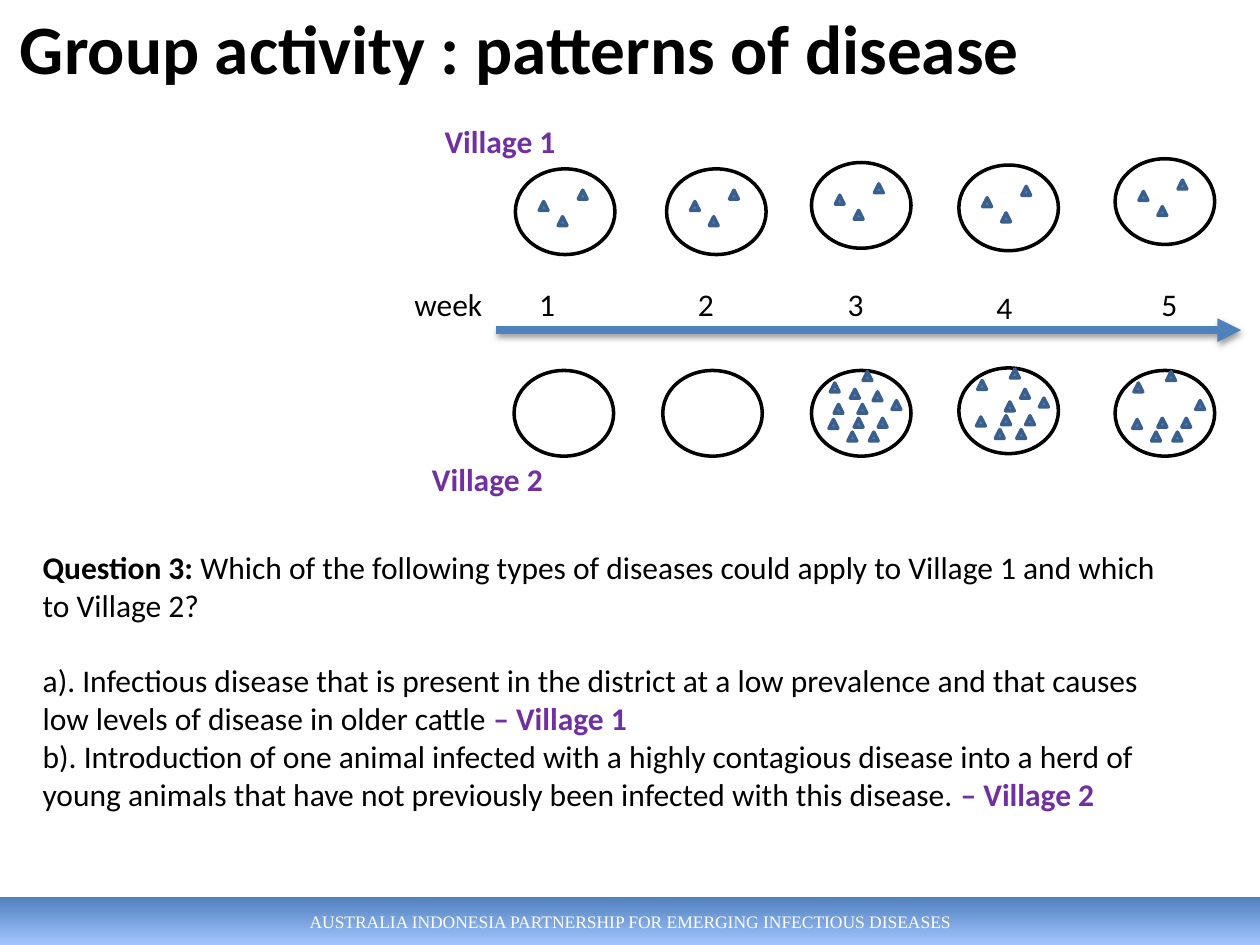
from lxml import etree
from pptx import Presentation, util as u
from pptx.dml.color import RGBColor
from pptx.enum import shapes, text
from pptx.oxml import ns

BLACK = RGBColor(0, 0, 0)
WHITE = RGBColor(0xFF, 0xFF, 0xFF)
BLUE = RGBColor(0x4F, 0x81, 0xBD)
NAVY = RGBColor(0x3A, 0x5F, 0x8C)
PALE = RGBColor(0xA4, 0xC4, 0xFF)
PURPLE = RGBColor(0x70, 0x30, 0xA0)

COLS, ROWS = 100, 75
WIDE, HIGH = u.Inches(10), u.Inches(7.5)
DISC = (7.9, 6.8)
DOT = (0.7, 0.7)
FEW = [(1.9, 2.6), (3.4, 3.8), (5, 1.7)]
MANY = [(1.8, 2.7), (3.1, 1.5), (4.9, 1.7), (3.7, 2.7), (3.4, 3.8), (5.3, 3.8),
        (4.6, 4.9), (1.4, 3.9), (1.5, 1), (4.1, 0.1), (6.4, 2.4), (2.9, 4.9)]
FIRST = [(9, 4.2, FEW), (21, 4.2, FEW), (32.5, 3.7, FEW), (44.2, 3.9, FEW), (56.6, 3.4, FEW)]
SECOND = [(8.9, 2, []), (20.7, 2, []), (32.5, 2, MANY), (44.2, 1.8, MANY[2:]), (56.6, 2, MANY[4:])]
WEEKS = [(9.9, 0), (22.5, 0), (34.4, 0), (46.2, 0.3), (59.3, 0)]


def grid(x, y):
    return int(WIDE * x / COLS), int(HIGH * y / ROWS)


def add_run(para, words, size=18, bold=False, tint=BLACK, face="Calibri"):
    run = para.add_run()
    run.text = words
    font = run.font
    font.size, font.bold, font.name = u.Pt(size), bold, face
    font.color.rgb = tint


def add_box(slide, x, y, w, h, wrap=True):
    box = slide.shapes.add_textbox(*grid(x, y), *grid(w, h))
    box.text_frame.word_wrap = wrap
    return box.text_frame


def add_label(slide, x, y, w, words, **style):
    add_run(add_box(slide, x, y, w, 4, False).paragraphs[0], words, **style)


def add_form(slide, kind, x, y, size, fill, edge):
    form = slide.shapes.add_shape(kind, *grid(x, y), *grid(*size))
    form.shadow.inherit = False
    form.fill.solid()
    form.fill.fore_color.rgb = fill
    form.line.color.rgb = edge
    form.line.width = u.Pt(2)


def add_herd(slide, x, y, dots):
    kind = shapes.MSO_SHAPE
    add_form(slide, kind.OVAL, x, y, DISC, WHITE, BLACK)
    for dx, dy in dots:
        add_form(slide, kind.ISOSCELES_TRIANGLE, x + dx, y + dy, DOT, BLUE, NAVY)


def add_village(slide, x, y, herds, name, at):
    for dx, dy, dots in herds:
        add_herd(slide, x + dx, y + dy, dots)
    add_label(slide, x + at[0], y + at[1], 10.9, name, bold=True, tint=PURPLE)


def add_arrow(slide, x, y, w):
    arrow = slide.shapes.add_connector(
        shapes.MSO_CONNECTOR.STRAIGHT, *grid(x, y), *grid(x + w, y))
    arrow.line.color.rgb = BLUE
    arrow.line.width = u.Pt(4.5)
    props = arrow.line._get_or_add_ln()
    etree.SubElement(props, ns.qn("a:tailEnd"), type="triangle")
    effects = etree.SubElement(arrow._element.spPr, ns.qn("a:effectLst"))
    shade = etree.SubElement(
        effects, ns.qn("a:outerShdw"), blurRad=str(u.Pt(3.1)), dist=str(u.Pt(1.6)),
        dir="5400000", rotWithShape="0")
    tint = etree.SubElement(shade, ns.qn("a:srgbClr"), val=str(BLACK))
    etree.SubElement(tint, ns.qn("a:alpha"), val="38000")


def add_axis(slide, x, y):
    add_arrow(slide, x + 7.5, y + 4.1, 59.1)
    add_label(slide, x, y, 7.5, "week")
    for week, (dx, dy) in enumerate(WEEKS, 1):
        add_label(slide, x + dx, y + dy, 3.3, str(week))


def add_title(slide, x, y, w, h):
    frame = add_box(slide, x, y, w, h)
    frame.vertical_anchor = text.MSO_ANCHOR.MIDDLE
    add_run(frame.paragraphs[0], "Group activity : patterns of disease", 39.6, True)


def add_question(slide, x, y, w, h):
    frame = add_box(slide, x, y, w, h)
    para = frame.paragraphs[0]
    add_run(para, "Question 3: ", bold=True)
    add_run(para, "Which of the following types of diseases could apply to Village 1 and which to Village 2?")
    para.space_after = u.Pt(21.6)
    choices = [
        ("a). Infectious disease that is present in the district at a low prevalence "
         "and that causes low levels of disease in older cattle ", "– Village 1"),
        ("b). Introduction of one animal infected with a highly contagious disease into a herd "
         "of young animals that have not previously been infected with this disease. ", "– Village 2"),
    ]
    for choice, reply in choices:
        para = frame.add_paragraph()
        add_run(para, choice)
        add_run(para, reply, bold=True, tint=PURPLE)


def add_footer(slide, x, y, w, h):
    bar = slide.shapes.add_shape(shapes.MSO_SHAPE.RECTANGLE, *grid(x, y), *grid(w, h))
    bar.shadow.inherit = False
    bar.line.fill.background()
    bar.fill.gradient()
    bar.fill.gradient_angle = 270
    for stop, tint, place in zip(bar.fill.gradient_stops, (BLUE, PALE), (0, 1)):
        stop.color.rgb = tint
        stop.position = place
    bar.text_frame.vertical_anchor = text.MSO_ANCHOR.MIDDLE
    para = bar.text_frame.paragraphs[0]
    para.alignment = text.PP_ALIGN.CENTER
    add_run(para, "AUSTRALIA INDONESIA PARTNERSHIP FOR EMERGING INFECTIOUS DISEASES",
            10, tint=WHITE, face="Times New Roman")


def main():
    deck = Presentation()
    deck.slide_width, deck.slide_height = WIDE, HIGH
    slide = deck.slides.add_slide(deck.slide_layouts[6])
    add_footer(slide, 0, 71.2, COLS, 3.8)
    add_title(slide, 0.6, -0.1, 90, 7.7)
    add_axis(slide, 31.9, 22.1)
    add_village(slide, 31.9, 9.2, FIRST, "Village 1", (2.4, 0))
    add_village(slide, 31.9, 27.4, SECOND, "Village 2", (1.4, 8.6))
    add_question(slide, 2.4, 43, 90.9, 22.2)
    deck.save("out.pptx")


if __name__ == "__main__":
    main()
